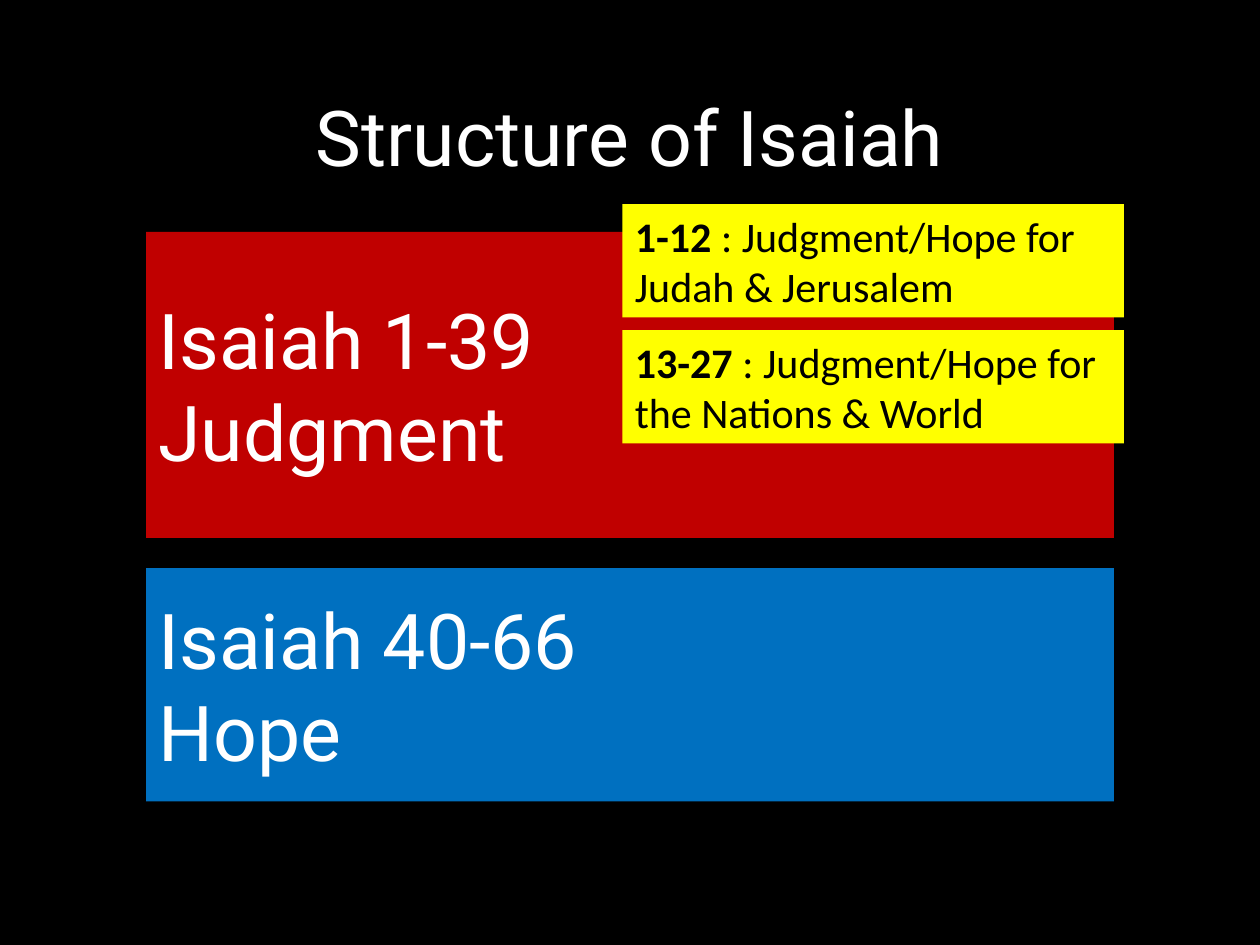
from dataclasses import dataclass

from pptx import Presentation
from pptx.dml.color import RGBColor
from pptx.enum.shapes import MSO_SHAPE as Preset
from pptx.enum.text import MSO_ANCHOR as Anchor, MSO_AUTO_SIZE as AutoSize, PP_ALIGN as Align
from pptx.util import Inches, Pt

WIDTH, HEIGHT = 10, 7.5
PART_LEFT, PART_WIDTH = 1.16, 7.68
NOTE_LEFT, NOTE_TOP, NOTE_WIDTH, NOTE_HEIGHT, NOTE_STEP = 4.94, 1.62, 3.98, 0.9, 1.0


@dataclass
class Part:
    chapters: str
    theme: str
    top: float
    height: float
    fill: str


@dataclass
class Note:
    chapters: str
    theme: str


PARTS = [
    Part("Isaiah 1-39", "Judgment", 1.84, 2.43, "C00000"),
    Part("Isaiah 40-66", "Hope", 4.51, 1.85, "0070C0"),
]
NOTES = [
    Note("1-12", " : Judgment/Hope for Judah & Jerusalem"),
    Note("13-27", " : Judgment/Hope for the Nations & World"),
]


def color(value: str) -> RGBColor:
    return RGBColor.from_string(value)


def add_run(para, text: str, size: float, font: str, ink: str, bold: bool = False) -> None:
    span = para.add_run()
    span.text = text
    span.font.size = Pt(size)
    span.font.name = font
    span.font.bold = bold
    span.font.color.rgb = color(ink)


def add_heading_run(para, text: str) -> None:
    add_run(para, text, 44, "Roboto", "FFFFFF")


def add_box(page, left: float, top: float, width: float, height: float, fill: str, anchor):
    box = page.shapes.add_shape(
        Preset.RECTANGLE, Inches(left), Inches(top), Inches(width), Inches(height))
    box.shadow.inherit = False
    box.fill.solid()
    box.fill.fore_color.rgb = color(fill)
    box.line.fill.background()
    frame = box.text_frame
    frame.word_wrap = True
    frame.vertical_anchor = anchor
    return frame


def add_title(page, text: str) -> None:
    title = page.shapes.title
    title.left, title.top = Inches(0.69), Inches(0.4)
    title.width, title.height = Inches(8.62), Inches(1.45)
    title.text_frame.vertical_anchor = Anchor.MIDDLE
    para = title.text_frame.paragraphs[0]
    para.alignment = Align.CENTER
    para.line_spacing = 0.9
    add_heading_run(para, text)


def add_part(page, part: Part) -> None:
    frame = add_box(page, PART_LEFT, part.top, PART_WIDTH, part.height, part.fill, Anchor.MIDDLE)
    for para, text in ((frame.paragraphs[0], part.chapters), (frame.add_paragraph(), part.theme)):
        para.alignment = Align.LEFT
        add_heading_run(para, text)


def add_note(page, note: Note, row: int) -> None:
    top = NOTE_TOP + row * NOTE_STEP
    frame = add_box(page, NOTE_LEFT, top, NOTE_WIDTH, NOTE_HEIGHT, "FFFF00", Anchor.TOP)
    frame.auto_size = AutoSize.SHAPE_TO_FIT_TEXT
    para = frame.paragraphs[0]
    para.alignment = Align.LEFT
    add_run(para, note.chapters, 24, "Calibri", "000000", bold=True)
    add_run(para, note.theme, 24, "Calibri", "000000")


def main() -> None:
    deck = Presentation()
    deck.slide_width, deck.slide_height = Inches(WIDTH), Inches(HEIGHT)
    page = deck.slides.add_slide(deck.slide_layouts.get_by_name("Title Only"))
    page.background.fill.solid()
    page.background.fill.fore_color.rgb = color("000000")
    add_title(page, "Structure of Isaiah")
    for part in PARTS:
        add_part(page, part)
    for row, note in enumerate(NOTES):
        add_note(page, note, row)
    deck.save("out.pptx")


if __name__ == "__main__":
    main()
